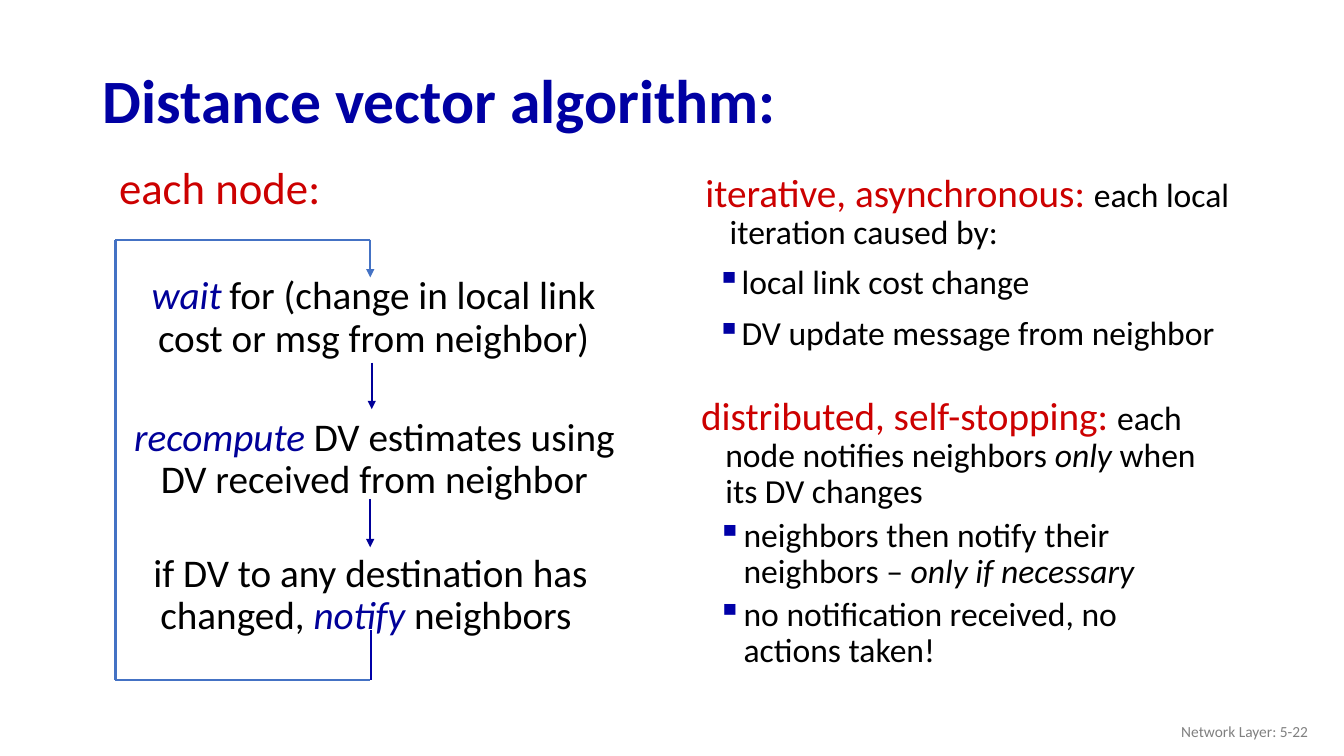
from lxml import etree
from pptx import Presentation
from pptx.dml.color import RGBColor
from pptx.enum.shapes import MSO_CONNECTOR
from pptx.enum.text import MSO_ANCHOR, PP_ALIGN
from pptx.oxml.ns import qn
from pptx.util import Cm, Pt

STRAIGHT = MSO_CONNECTOR.STRAIGHT
TOP, MIDDLE = MSO_ANCHOR.TOP, MSO_ANCHOR.MIDDLE
LEFT, CENTER, RIGHT = PP_ALIGN.LEFT, PP_ALIGN.CENTER, PP_ALIGN.RIGHT

TITLE_BLUE = RGBColor(0x00, 0x00, 0xA3)
BULLET_BLUE = RGBColor(0x00, 0x00, 0xA8)
STEP_BLUE = RGBColor(0x00, 0x00, 0x99)
LOOP_BLUE = RGBColor(0x44, 0x72, 0xC4)
RED = RGBColor(0xCC, 0x00, 0x00)
BLACK = RGBColor(0x00, 0x00, 0x00)
GRAY = RGBColor(0x80, 0x80, 0x80)

TITLE = {"size": Pt(44), "bold": True}
HEADING = {"size": Pt(32)}
LEAD = {"size": Pt(28)}
VERB = {"size": Pt(28), "italic": True}
BODY = {"size": Pt(24)}
EMPHASIS = {"size": Pt(24), "italic": True}
FOOTER = {"size": Pt(11)}


def add_text(slide, box, anchor=TOP, wrap=True):
    """Add an empty text box at left, top, width, height in centimetres."""
    tf = slide.shapes.add_textbox(*map(Cm, box)).text_frame
    tf.word_wrap = wrap
    tf.vertical_anchor = anchor
    return tf


def add_paragraph(tf, runs, first=False, **fmt):
    """Add a paragraph of (text, font format, colour) runs."""
    p = tf.paragraphs[0] if first else tf.add_paragraph()
    for name, value in fmt.items():
        setattr(p, name, value)
    for text, font, color in runs:
        r = p.add_run()
        r.text = text
        r.font.name = "Calibri"
        r.font.color.rgb = color
        for name, value in font.items():
            setattr(r.font, name, value)
    return p


def set_indent(p, margin, hanging):
    """Set the left margin and hanging indent in centimetres."""
    pPr = p._p.get_or_add_pPr()
    pPr.set("marL", str(Cm(margin)))
    pPr.set("indent", str(-Cm(hanging)))
    return pPr


def add_bullet(p, margin, hanging, color):
    """Give a paragraph a coloured square bullet."""
    pPr = set_indent(p, margin, hanging)
    clr = etree.SubElement(pPr, qn("a:buClr"))
    etree.SubElement(clr, qn("a:srgbClr"), val=str(color))
    etree.SubElement(pPr, qn("a:buChar"), char="▪")


def add_topic(slide, box, lead, bullets, margin, hanging, gap, color):
    """Add a lead paragraph with its bulleted list."""
    tf = add_text(slide, box)
    p = add_paragraph(tf, lead, first=True, line_spacing=0.9, space_before=Pt(10))
    set_indent(p, 0.99, 0.61)
    for runs in bullets:
        p = add_paragraph(tf, runs, line_spacing=0.9, space_before=gap)
        add_bullet(p, margin, hanging, color)


def add_line(slide, x1, y1, x2, y2, color, arrow=False):
    """Add a straight line in centimetres, with an arrowhead if asked."""
    line = slide.shapes.add_connector(STRAIGHT, Cm(x1), Cm(y1), Cm(x2), Cm(y2))
    line.line.color.rgb = color
    line.line.width = Pt(1.5)
    if arrow:
        etree.SubElement(line.line._get_or_add_ln(), qn("a:tailEnd"), type="triangle")
    etree.SubElement(line._element.spPr, qn("a:effectLst"))


def add_label(slide, box, text, font, color, align=LEFT, anchor=MIDDLE, wrap=True):
    """Add a single line of text."""
    tf = add_text(slide, box, anchor, wrap)
    add_paragraph(tf, [(text, font, color)], first=True, alignment=align)


def add_steps(slide):
    """Add the three steps of the node loop."""
    steps = [
        (3.0, 6.83, [("wait", VERB, STEP_BLUE), (" ", BODY, STEP_BLUE),
                     ("for (change in local link cost or msg from neighbor)", LEAD, BLACK)]),
        (3.02, 10.39, [("recompute", VERB, STEP_BLUE),
                       (" DV estimates using DV received from neighbor", LEAD, BLACK)]),
        (2.92, 13.82, [("if DV to any destination has changed, ", LEAD, BLACK),
                       ("notify", VERB, STEP_BLUE), (" neighbors ", LEAD, BLACK)]),
    ]
    for left, top, runs in steps:
        tf = add_text(slide, (left, top, 12.83, 2.4))
        add_paragraph(tf, runs, first=True, alignment=CENTER, line_spacing=0.9)


def add_loop(slide):
    """Add the arrows between the steps and the line back to the start."""
    left, right, top, bottom = 2.91, 9.33, 6.04, 17.14
    add_line(slide, 9.37, 9.14, 9.37, 10.31, STEP_BLUE, arrow=True)
    add_line(slide, right, 12.57, right, 13.79, STEP_BLUE, arrow=True)
    add_line(slide, 9.35, bottom, 9.35, 15.88, BULLET_BLUE)
    add_line(slide, right, top, right, 6.99, LOOP_BLUE, arrow=True)
    add_line(slide, left, bottom, right, bottom, LOOP_BLUE)
    add_line(slide, left, top, right, top, LOOP_BLUE)
    add_line(slide, left, top, left, bottom, LOOP_BLUE)


def main():
    """Build the slide and save it."""
    prs = Presentation()
    prs.slide_width, prs.slide_height = Cm(33.87), Cm(19.05)
    slide = prs.slides.add_slide(prs.slide_layouts[6])
    add_label(slide, (2.34, 1.24, 29.21, 2.49), "Distance vector algorithm:", TITLE, TITLE_BLUE)
    add_label(slide, (25.6, 17.91, 7.62, 1.02), "Network Layer: 5-22", FOOTER, GRAY, RIGHT)
    add_label(slide, (2.72, 3.89, 5.64, 1.63), "each node:", HEADING, RED, CENTER, TOP, False)
    add_steps(slide)
    add_loop(slide)
    add_topic(
        slide, (17.15, 4.24, 15.01, 5.49),
        [("iterative, asynchronous: ", LEAD, RED),
         ("each local iteration caused by:", BODY, BLACK)],
        [[("local link cost change", BODY, BLACK)],
         [("DV update message from neighbor", BODY, BLACK)]],
        1.27, 0.61, Pt(10), TITLE_BLUE)
    add_topic(
        slide, (17.04, 9.86, 13.72, 8.1),
        [("distributed, self-stopping: ", LEAD, RED),
         ("each node notifies neighbors ", BODY, BLACK),
         ("only", EMPHASIS, BLACK), (" when its DV changes", BODY, BLACK)],
        [[("neighbors then notify their neighbors – ", BODY, BLACK),
          ("only if necessary", EMPHASIS, BLACK)],
         [("no notification received, no actions taken!", BODY, BLACK)]],
        1.45, 0.66, Pt(5), BULLET_BLUE)
    prs.save("out.pptx")


if __name__ == "__main__":
    main()
